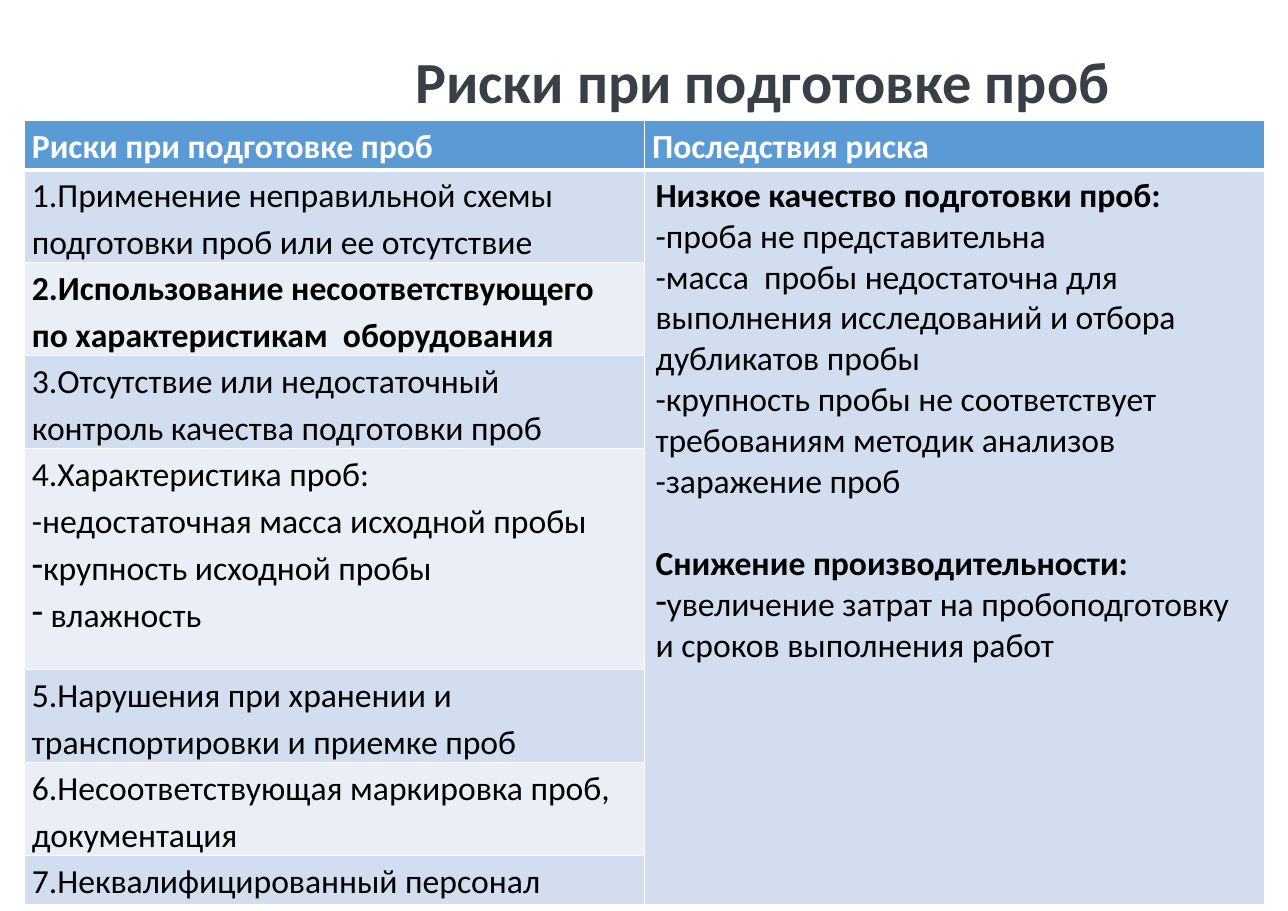
from dataclasses import dataclass

from lxml.etree import SubElement
from pptx import Presentation
from pptx.dml.color import RGBColor
from pptx.enum.text import MSO_ANCHOR
from pptx.oxml.ns import qn
from pptx.util import Inches, Pt

WHITE = RGBColor(0xFF, 0xFF, 0xFF)
BLACK = RGBColor(0x00, 0x00, 0x00)
SLATE = RGBColor(0x38, 0x3F, 0x47)
HEADER_BLUE = RGBColor(0x5B, 0x9B, 0xD5)
BAND_DARK = RGBColor(0xD2, 0xDE, 0xEF)
BAND_LIGHT = RGBColor(0xEA, 0xEF, 0xF7)
FONT = "Calibri"


@dataclass(frozen=True)
class Para:
    text: str
    bold: bool = False
    dash: bool = False
    before: float = 0


@dataclass(frozen=True)
class Risk:
    height: float
    paras: tuple[Para, ...]


TITLE = "Риски при подготовке проб"
HEADERS = (TITLE, "Последствия риска")
HEADER_HEIGHT = 0.45
COLUMN_WIDTH = 5.63

RISKS = (
    Risk(0.81, (Para("1.Применение неправильной схемы подготовки проб или ее отсутствие"),)),
    Risk(0.81, (Para("2.Использование несоответствующего по характеристикам  оборудования", bold=True),)),
    Risk(0.81, (Para("3.Отсутствие или недостаточный контроль качества подготовки проб"),)),
    Risk(2.01, (
        Para("4.Характеристика проб:"),
        Para("-недостаточная масса исходной пробы"),
        Para("крупность исходной пробы", dash=True),
        Para(" влажность", dash=True),
    )),
    Risk(0.81, (Para("5.Нарушения при хранении и транспортировки и приемке проб"),)),
    Risk(0.81, (Para("6.Несоответствующая маркировка проб, документация"),)),
    Risk(0.45, (Para("7.Неквалифицированный персонал"),)),
)

CONSEQUENCES = (
    Para("Низкое качество подготовки проб:", bold=True),
    Para("-проба не представительна"),
    Para("-масса  пробы недостаточна для выполнения исследований и отбора дубликатов пробы"),
    Para("-крупность пробы не соответствует требованиям методик анализов"),
    Para("-заражение проб"),
    Para("Снижение производительности:", bold=True, before=27),
    Para("увеличение затрат на пробоподготовку и сроков выполнения работ", dash=True),
)


def write(tf, paras: tuple[Para, ...], *, size: float = 22,
          color: RGBColor = BLACK, spacing: float = 1.0) -> None:
    for i, para in enumerate(paras):
        p = tf.add_paragraph() if i else tf.paragraphs[0]
        p.line_spacing = spacing
        if para.before:
            p.space_before = Pt(para.before)
        if para.dash:
            pPr = p._p.get_or_add_pPr()
            pPr.set("marL", "0")
            pPr.set("indent", "0")
            SubElement(pPr, qn("a:buChar"), char="-")
        r = p.add_run()
        r.text = para.text
        r.font.name = FONT
        r.font.size = Pt(size)
        r.font.bold = para.bold
        r.font.color.rgb = color


def style_cell(cell, fill: RGBColor, *, top: float = 1, bottom: float = 1) -> None:
    tcPr = cell._tc.get_or_add_tcPr()
    for side, width in (("L", 1), ("R", 1), ("T", top), ("B", bottom)):
        ln = SubElement(tcPr, qn(f"a:ln{side}"), w=str(Pt(width)))
        SubElement(SubElement(ln, qn("a:solidFill")), qn("a:srgbClr"), val=str(WHITE))
    cell.fill.solid()
    cell.fill.fore_color.rgb = fill


def set_tight_margins(cell) -> None:
    cell.margin_left = cell.margin_right = Inches(0.07)
    cell.margin_top = cell.margin_bottom = 0


def add_title(slide) -> None:
    box = slide.shapes.add_textbox(Inches(3.67), Inches(0.44), Inches(7.22), Inches(0.65))
    tf = box.text_frame
    tf.word_wrap = True
    tf.vertical_anchor = MSO_ANCHOR.MIDDLE
    write(tf, (Para(TITLE, bold=True),), size=38, color=SLATE, spacing=0.9)


def add_risk_table(slide) -> None:
    heights = [HEADER_HEIGHT] + [risk.height for risk in RISKS]
    table = slide.shapes.add_table(
        len(heights), len(HEADERS), Inches(0.22), Inches(1.09),
        Inches(COLUMN_WIDTH * len(HEADERS)), Inches(sum(heights))).table
    for row, height in zip(table.rows, heights):
        row.height = Inches(height)

    for col, header in enumerate(HEADERS):
        table.columns[col].width = Inches(COLUMN_WIDTH)
        cell = table.cell(0, col)
        style_cell(cell, HEADER_BLUE, bottom=3)
        set_tight_margins(cell)
        write(cell.text_frame, (Para(header, bold=True),), color=WHITE, spacing=1.15)

    for row, risk in enumerate(RISKS, start=1):
        cell = table.cell(row, 0)
        top = 3 if row == 1 else 1
        style_cell(cell, BAND_DARK if row % 2 else BAND_LIGHT, top=top)
        style_cell(table.cell(row, 1), BAND_DARK, top=top)
        set_tight_margins(cell)
        write(cell.text_frame, risk.paras, spacing=1.15)

    consequences = table.cell(1, 1)
    consequences.merge(table.cell(len(RISKS), 1))
    write(consequences.text_frame, CONSEQUENCES)


def main() -> None:
    prs = Presentation()
    prs.slide_width = Inches(11.69)
    prs.slide_height = Inches(8.27)
    slide = prs.slides.add_slide(prs.slide_layouts[6])
    add_title(slide)
    add_risk_table(slide)
    prs.save("out.pptx")


if __name__ == "__main__":
    main()
